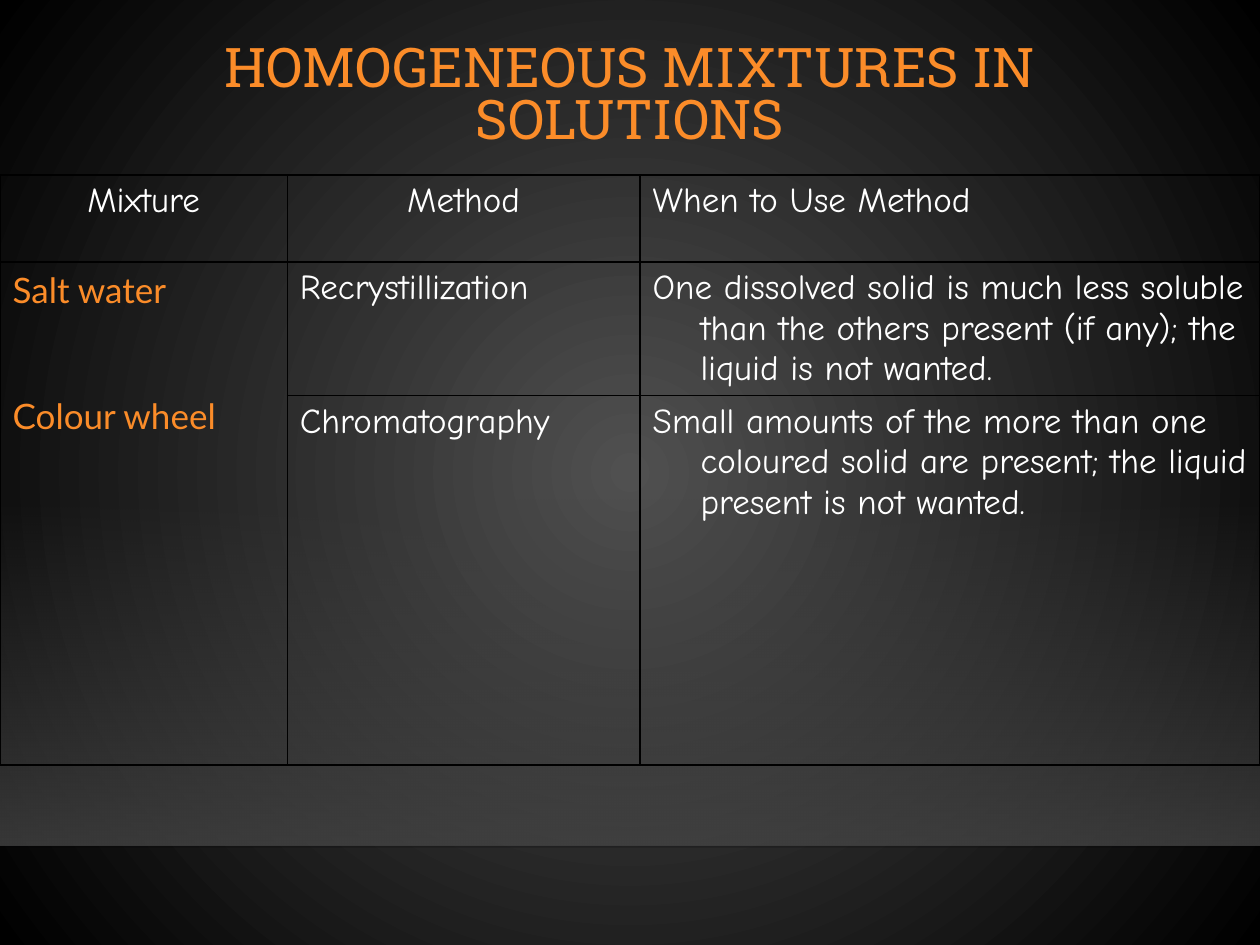
from dataclasses import dataclass

from lxml import etree
from pptx import Presentation, util as u
from pptx.dml.color import RGBColor
from pptx.enum import shapes, text
from pptx.oxml import parse_xml
from pptx.oxml.ns import nsdecls, qn


@dataclass(frozen=True)
class Theme:
    accent: str = "FB8C29"
    body: str = "FFFFFF"
    border: str = "000000"
    glow: str = "505050"
    edge: str = "000000"
    panel: str = "454545"
    rule: str = "000001"
    title_font: str = "Roboto Slab"
    table_font: str = "Comic Neue"
    mixture_font: str = "Lato"
    title_size: float = 31.2
    table_size: float = 20


def gradient(stops, direction):
    """Return a gradFill element; stops are (position %, colour, opacity %)."""
    gs = "".join(
        f'<a:gs pos="{pos * 1000}"><a:srgbClr val="{color}">'
        f'<a:alpha val="{alpha * 1000}"/></a:srgbClr></a:gs>'
        for pos, color, alpha in stops)
    return parse_xml(f'<a:gradFill {nsdecls("a")} rotWithShape="1">'
                     f'<a:gsLst>{gs}</a:gsLst>{direction}</a:gradFill>')


class SlideBuilder:
    def __init__(self, prs, theme):
        self.theme = theme
        self.s = prs.slides.add_slide(prs.slide_layouts[5])

    def font(self, p, name, size, color):
        p.font.name = name
        p.font.size = u.Pt(size)
        p.font.bold = False
        p.font.color.rgb = RGBColor.from_string(color)

    def background(self):
        t = self.theme
        self.s.background.fill.solid()
        bg = self.s.background.fill._xPr
        bg.replace(bg.find(qn("a:solidFill")), gradient(
            [(0, t.glow, 100), (100, t.edge, 100)],
            '<a:path path="circle"><a:fillToRect l="50000" t="50000" '
            'r="50000" b="50000"/></a:path>'))

    def panel(self, x, y, w, h):
        t = self.theme
        sp = self.s.shapes.add_shape(
            shapes.MSO_SHAPE.RECTANGLE, *map(u.Inches, (x, y, w, h)))
        sp.shadow.inherit = False
        sp.line.fill.background()
        sp.fill.solid()
        fill = sp._element.spPr.find(qn("a:solidFill"))
        sp._element.spPr.replace(fill, gradient(
            [(0, t.panel, 0), (100, t.panel, 80)],
            '<a:lin ang="5400000" scaled="0"/>'))

    def rule(self, x1, y1, x2, y2):
        line = self.s.shapes.add_connector(
            shapes.MSO_CONNECTOR.STRAIGHT, *map(u.Inches, (x1, y1, x2, y2)))
        line.line.width = u.Pt(1)
        line.line.color.rgb = RGBColor.from_string(self.theme.rule)
        color = next(line._element.spPr.iter(qn("a:srgbClr")))
        etree.SubElement(color, qn("a:alpha"), val="20000")
        etree.SubElement(line._element.spPr, qn("a:effectLst"))

    def title(self, wording, x, y, w, h):
        t = self.theme
        sp = self.s.shapes.title
        sp.left, sp.top, sp.width, sp.height = map(u.Inches, (x, y, w, h))
        tf = sp.text_frame
        tf.text = wording
        tf.word_wrap = True
        tf.auto_size = text.MSO_AUTO_SIZE.NONE
        tf.vertical_anchor = text.MSO_ANCHOR.MIDDLE
        p = tf.paragraphs[0]
        p.alignment = text.PP_ALIGN.CENTER
        p.line_spacing = 0.8
        self.font(p, t.title_font, t.title_size, t.accent)

    def borders(self, cell):
        tc_pr = cell._tc.get_or_add_tcPr()
        for i, side in enumerate(("lnL", "lnR", "lnT", "lnB")):
            tc_pr.insert(i, parse_xml(
                f'<a:{side} {nsdecls("a")} w="12700"><a:solidFill>'
                f'<a:srgbClr val="{self.theme.border}"/></a:solidFill></a:{side}>'))

    def write_cell(self, cell, wording, centred, name, color):
        cell.text = wording
        for i, p in enumerate(cell.text_frame.paragraphs):
            p._p.get_or_add_pPr().set("marL", str(u.Inches(0.38)))
            p._p.get_or_add_pPr().set("indent", str(u.Inches(-0.38)))
            p.alignment = text.PP_ALIGN.CENTER if centred else text.PP_ALIGN.LEFT
            if i:
                p.space_before = u.Pt(48)
            self.font(p, name, self.theme.table_size, color)

    def table(self, rows, x, y, widths, heights):
        """Draw the rows; None marks a cell merged into the one above."""
        t = self.theme
        tbl = self.s.shapes.add_table(
            len(rows), len(widths), u.Inches(x), u.Inches(y),
            u.Inches(sum(widths)), u.Inches(sum(heights))).table
        tbl.first_row = tbl.horz_banding = False
        for col, w in zip(tbl.columns, widths):
            col.width = u.Inches(w)
        for row, h in zip(tbl.rows, heights):
            row.height = u.Inches(h)
        for r, row in enumerate(rows):
            for c, wording in enumerate(row):
                cell = tbl.cell(r, c)
                cell.fill.background()
                self.borders(cell)
                if wording is None:
                    tbl.cell(r - 1, c).merge(cell)
                    continue
                mixture = r > 0 and c == 0
                self.write_cell(
                    cell, wording, centred=r == 0 and c < 2,
                    name=t.mixture_font if mixture else t.table_font,
                    color=t.accent if mixture else t.body)


def main():
    prs = Presentation()
    prs.slide_width, prs.slide_height = u.Inches(10), u.Inches(7.5)
    slide = SlideBuilder(prs, Theme())
    slide.background()
    slide.panel(0, 3.96, 10, 2.75)
    slide.rule(0, 6.72, 10, 6.72)
    slide.table(
        [["Mixture", "Method", "When to Use Method"],
         ["Salt water\nColour wheel", "Recrystillization",
          "One dissolved solid is much less soluble than the others present "
          "(if any); the liquid is not wanted."],
         [None, "Chromatography",
          "Small amounts of the more than one coloured solid are present; "
          "the liquid present is not wanted."]],
        0, 1.39, widths=[2.28, 2.8, 4.92], heights=[0.69, 1.06, 2.93])
    slide.title("HOMOGENEOUS MIXTURES IN SOLUTIONS", 0.5, 0.3, 9, 0.95)
    prs.save("out.pptx")


if __name__ == "__main__":
    main()
